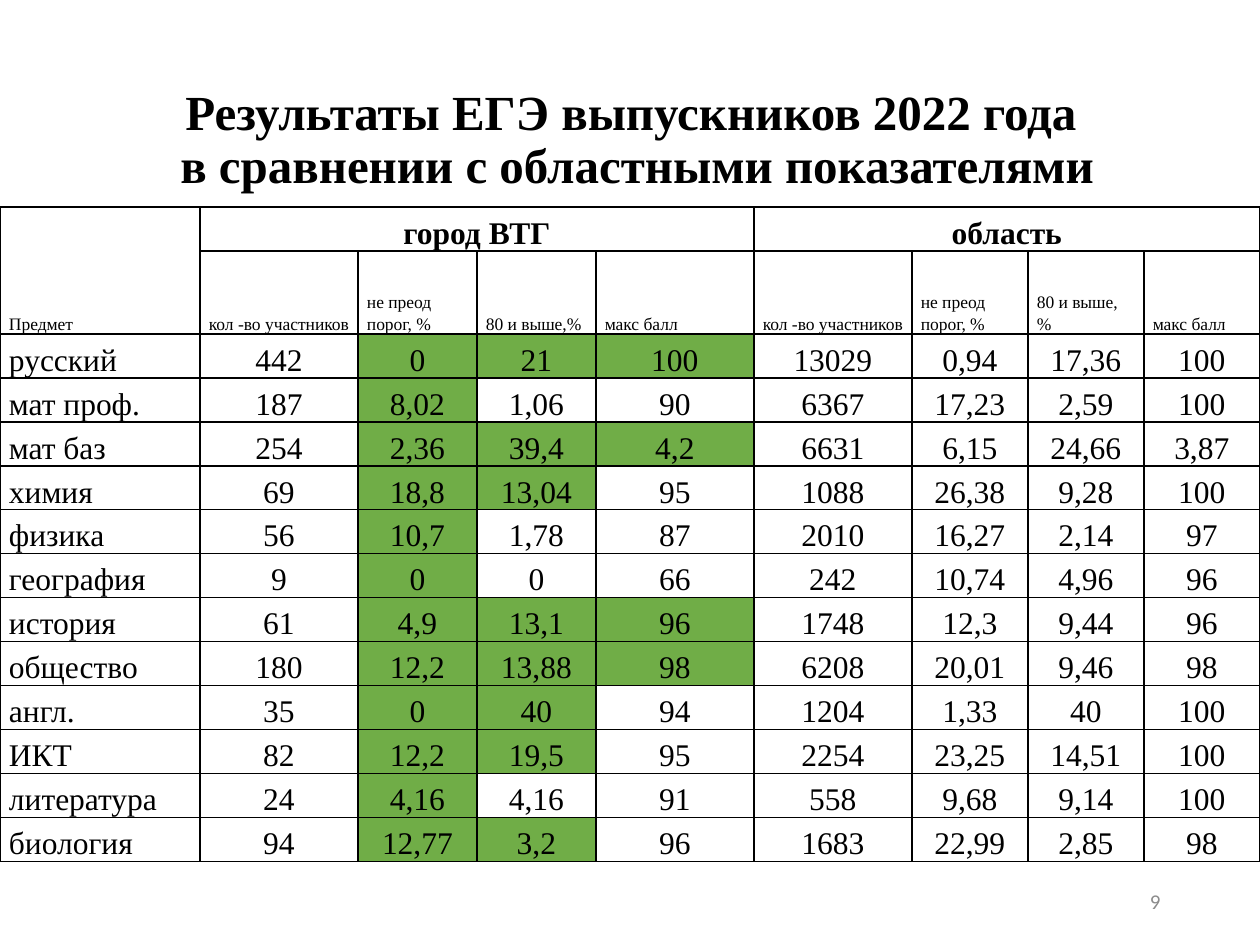
from lxml import etree
from pptx import Presentation
from pptx.dml.color import RGBColor
from pptx.enum.text import MSO_ANCHOR, PP_ALIGN
from pptx.oxml.ns import qn
from pptx.util import Pt

LEFT, CENTER, RIGHT = PP_ALIGN.LEFT, PP_ALIGN.CENTER, PP_ALIGN.RIGHT
MIDDLE, BOTTOM = MSO_ANCHOR.MIDDLE, MSO_ANCHOR.BOTTOM
SERIF, SANS = "Times New Roman", "Calibri"
BLACK, GREY, GREEN = "000000", "8C8C8C", "70AD47"
PX = 914400 // 126

# Content
TITLE = "Результаты ЕГЭ выпускников 2022 года \vв сравнении с областными показателями"
PAGE = "9"
GROUPS = [(1, "город ВТГ"), (5, "область")]
HEADERS = ["кол -во участников", "не преод порог, %", "80 и выше,%", "макс балл",
           "кол -во участников", "не преод порог, %", "80 и выше, %", "макс балл"]
# Subject, number of green cells from the third column on, values
RESULTS = [
    ("русский", 3, ["442", "0", "21", "100", "13029", "0,94", "17,36", "100"]),
    ("мат проф.", 1, ["187", "8,02", "1,06", "90", "6367", "17,23", "2,59", "100"]),
    ("мат баз", 3, ["254", "2,36", "39,4", "4,2", "6631", "6,15", "24,66", "3,87"]),
    ("химия", 2, ["69", "18,8", "13,04", "95", "1088", "26,38", "9,28", "100"]),
    ("физика", 1, ["56", "10,7", "1,78", "87", "2010", "16,27", "2,14", "97"]),
    ("география", 1, ["9", "0", "0", "66", "242", "10,74", "4,96", "96"]),
    ("история", 3, ["61", "4,9", "13,1", "96", "1748", "12,3", "9,44", "96"]),
    ("общество", 3, ["180", "12,2", "13,88", "98", "6208", "20,01", "9,46", "98"]),
    ("англ.", 2, ["35", "0", "40", "94", "1204", "1,33", "40", "100"]),
    ("ИКТ", 2, ["82", "12,2", "19,5", "95", "2254", "23,25", "14,51", "100"]),
    ("литература", 1, ["24", "4,16", "4,16", "91", "558", "9,68", "9,14", "100"]),
    ("биология", 2, ["94", "12,77", "3,2", "96", "1683", "22,99", "2,85", "98"]),
]
COLUMNS = [200, 158, 119, 119, 158, 158, 116, 116, 116]
ROWS = [44, 83] + [44] * len(RESULTS)


def rgb(color):
    return RGBColor.from_string(color)


def write(tf, text, size, align, spacing, font=SERIF, color=BLACK, bold=False):
    tf.text = text
    p = tf.paragraphs[0]
    p.alignment, p.line_spacing = align, spacing
    p.font.name, p.font.size, p.font.bold = font, Pt(size), bold
    p.font.color.rgb = rgb(color)


def add_borders(cell):
    tc_pr = cell._tc.get_or_add_tcPr()
    for i, side in enumerate(("a:lnL", "a:lnR", "a:lnT", "a:lnB")):
        ln = etree.Element(qn(side), w=str(Pt(1)))
        fill = etree.SubElement(ln, qn("a:solidFill"))
        etree.SubElement(fill, qn("a:srgbClr"), val=BLACK)
        tc_pr.insert(i, ln)


def fill_cell(cell, text, size, align, bold=False, green=False):
    write(cell.text_frame, text, size, align, 1.15, bold=bold)
    if green:
        cell.fill.solid()
        cell.fill.fore_color.rgb = rgb(GREEN)


prs = Presentation()
prs.slide_width, prs.slide_height = 1260 * PX, 945 * PX
s = prs.slides.add_slide(prs.slide_layouts[5])

# Title
title = s.shapes.title
title.left, title.top, title.width, title.height = 14 * PX, 50 * PX, 1246 * PX, 183 * PX
title.text_frame.vertical_anchor = MIDDLE
write(title.text_frame, TITLE, 28, CENTER, 0.9, bold=True)

# Page number
sp = s.shapes.add_textbox(890 * PX, 876 * PX, 283 * PX, 50 * PX)
sp.text_frame.word_wrap = True
sp.text_frame.vertical_anchor = MIDDLE
write(sp.text_frame, PAGE, 12, RIGHT, 1.0, SANS, GREY)

# Table grid
table = s.shapes.add_table(len(ROWS), len(COLUMNS), 0, 207 * PX,
                           sum(COLUMNS) * PX, sum(ROWS) * PX).table
table.first_row = table.horz_banding = False
for column, width in zip(table.columns, COLUMNS):
    column.width = width * PX
for row, height in zip(table.rows, ROWS):
    row.height = height * PX
for cell in table.iter_cells():
    cell.margin_left = cell.margin_right = 9 * PX
    cell.margin_top = cell.margin_bottom = 0
    cell.vertical_anchor = BOTTOM
    cell.fill.background()
    add_borders(cell)

# Table headings
table.cell(0, 0).merge(table.cell(1, 0))
fill_cell(table.cell(0, 0), "Предмет", 10, LEFT)
for c, name in GROUPS:
    table.cell(0, c).merge(table.cell(0, c + 3))
    fill_cell(table.cell(0, c), name, 18, CENTER, bold=True)
for c, name in enumerate(HEADERS, 1):
    fill_cell(table.cell(1, c), name, 10, LEFT)

# Results by subject
for r, (subject, greens, values) in enumerate(RESULTS, 2):
    fill_cell(table.cell(r, 0), subject, 18, LEFT)
    for c, value in enumerate(values, 1):
        fill_cell(table.cell(r, c), value, 18, CENTER, green=2 <= c < 2 + greens)

prs.save("out.pptx")
